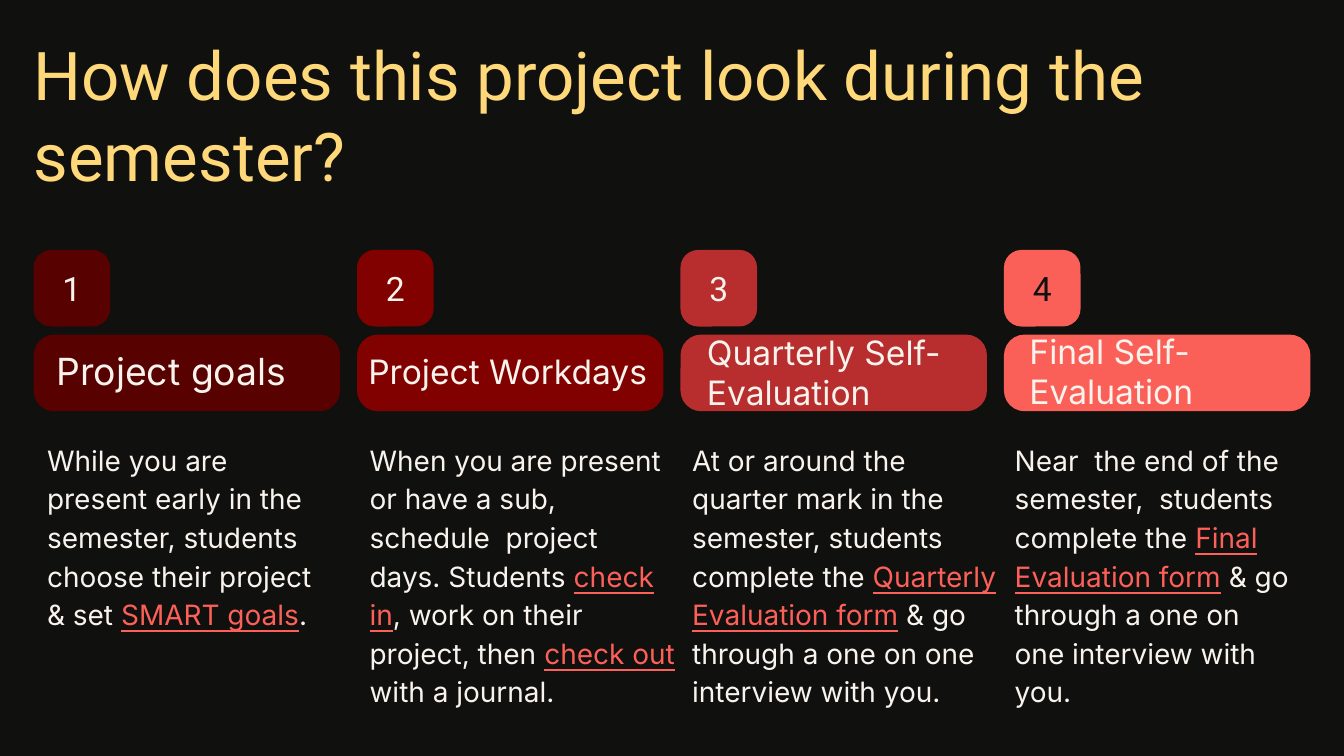
"""Build a slide with the four stages of a semester project."""
from pptx import Presentation
from pptx.dml.color import RGBColor
from pptx.enum.shapes import MSO_SHAPE as SHAPE
from pptx.enum.text import MSO_ANCHOR as ANCHOR, PP_ALIGN as ALIGN
from pptx.util import Inches, Pt

DARK = RGBColor(0x10, 0x10, 0x0F)
CREAM = RGBColor(0xF8, 0xF3, 0xEC)
YELLOW = RGBColor(0xFF, 0xD9, 0x79)
LINK = RGBColor(0xFC, 0x60, 0x58)
MAROON = RGBColor(0x57, 0x01, 0x00)
CRIMSON = RGBColor(0x81, 0x01, 0x00)
BRICK = RGBColor(0xB8, 0x2D, 0x2D)
CORAL = RGBColor(0xFB, 0x60, 0x58)

W = 10
H = W * 9 / 16
MARGIN = W / 40
CARD_W, CARD_H = 2.28, 0.57
PITCH = (W - 2 * MARGIN - CARD_W) / 3
BODY_X, BODY_PITCH = 0.35, 2.4
NUMBER_Y, HEADING_Y, BODY_Y = 1.86, 2.49, 3.26

STAGES = [
    (MAROON, CREAM, "Project goals", 20, (0.42, 2.64, 2.03, 0.34), (2.09, 1.41),
     ["While you are present early in the semester, students choose their project & set ",
      "SMART goals", "."]),
    (CRIMSON, CREAM, "Project Workdays", 18, (2.74, 2.64, 2.28, 0.34), (2.28, 1.99),
     ["When you are present or have a sub, schedule  project days. Students ",
      "check in", ", work on their project, then ", "check out", " with a journal."]),
    (BRICK, CREAM, "Quarterly Self-Evaluation", 18, (5.26, 2.54, 1.99, 0.56), (2.28, 1.99),
     ["At or around the quarter mark in the semester, students complete the ",
      "Quarterly Evaluation form", " & go through a one on one interview with you."]),
    (CORAL, DARK, "Final Self-Evaluation", 18, (7.66, 2.58, 1.99, 0.46), (2.09, 1.99),
     ["Near  the end of the semester,  students complete the ",
      "Final Evaluation form", " & go through a one on one interview with you."]),
]

prs = Presentation()
prs.slide_width, prs.slide_height = Inches(W), Inches(H)
s = prs.slides.add_slide(prs.slide_layouts[6])
s.background.fill.solid()
s.background.fill.fore_color.rgb = DARK


def add_card(x, y, w, radius, color):
    sp = s.shapes.add_shape(SHAPE.ROUNDED_RECTANGLE, Inches(x), Inches(y), Inches(w), Inches(CARD_H))
    sp.adjustments[0] = radius
    sp.shadow.inherit = False
    sp.fill.solid()
    sp.fill.fore_color.rgb = color
    sp.line.fill.background()
    return sp


def add_text(x, y, w, h, runs, font, size, color, inset=0):
    tf = s.shapes.add_textbox(Inches(x), Inches(y), Inches(w), Inches(h)).text_frame
    tf.word_wrap = True
    tf.margin_left = tf.margin_top = 0
    tf.margin_right = tf.margin_bottom = Inches(inset)
    for i, text in enumerate(runs):
        r = tf.paragraphs[0].add_run()
        r.text = text
        r.font.name, r.font.size = font, Pt(size)
        is_link = i % 2 == 1
        r.font.color.rgb = LINK if is_link else color
        r.font.underline = is_link
    return tf


add_text(MARGIN, MARGIN, 9.59, 1.21, ["How does this project look during the semester?"],
         "Roboto", 36, YELLOW)

for i, (fill, ink, heading, size, heading_box, body_box, body) in enumerate(STAGES):
    x = MARGIN + i * PITCH
    add_card(x, HEADING_Y, CARD_W, 0.27, fill)

    tf = add_card(x, NUMBER_Y, CARD_H, 0.23, fill).text_frame
    tf.margin_left = tf.margin_right = tf.margin_top = tf.margin_bottom = Inches(0.1)
    tf.vertical_anchor = ANCHOR.MIDDLE
    p = tf.paragraphs[0]
    p.text = str(i + 1)
    p.alignment = ALIGN.CENTER
    p.font.name, p.font.size = "Roboto", Pt(18)
    p.font.color.rgb = ink

    tf = add_text(*heading_box, [heading], "Inter", size, CREAM, 0.1)
    tf.vertical_anchor = ANCHOR.MIDDLE

    tf = add_text(BODY_X + i * BODY_PITCH, BODY_Y, *body_box, body, "Inter", 15, CREAM)
    tf.paragraphs[0].line_spacing = 1.15
    tf.paragraphs[0].space_after = Pt(8)

prs.save("out.pptx")
